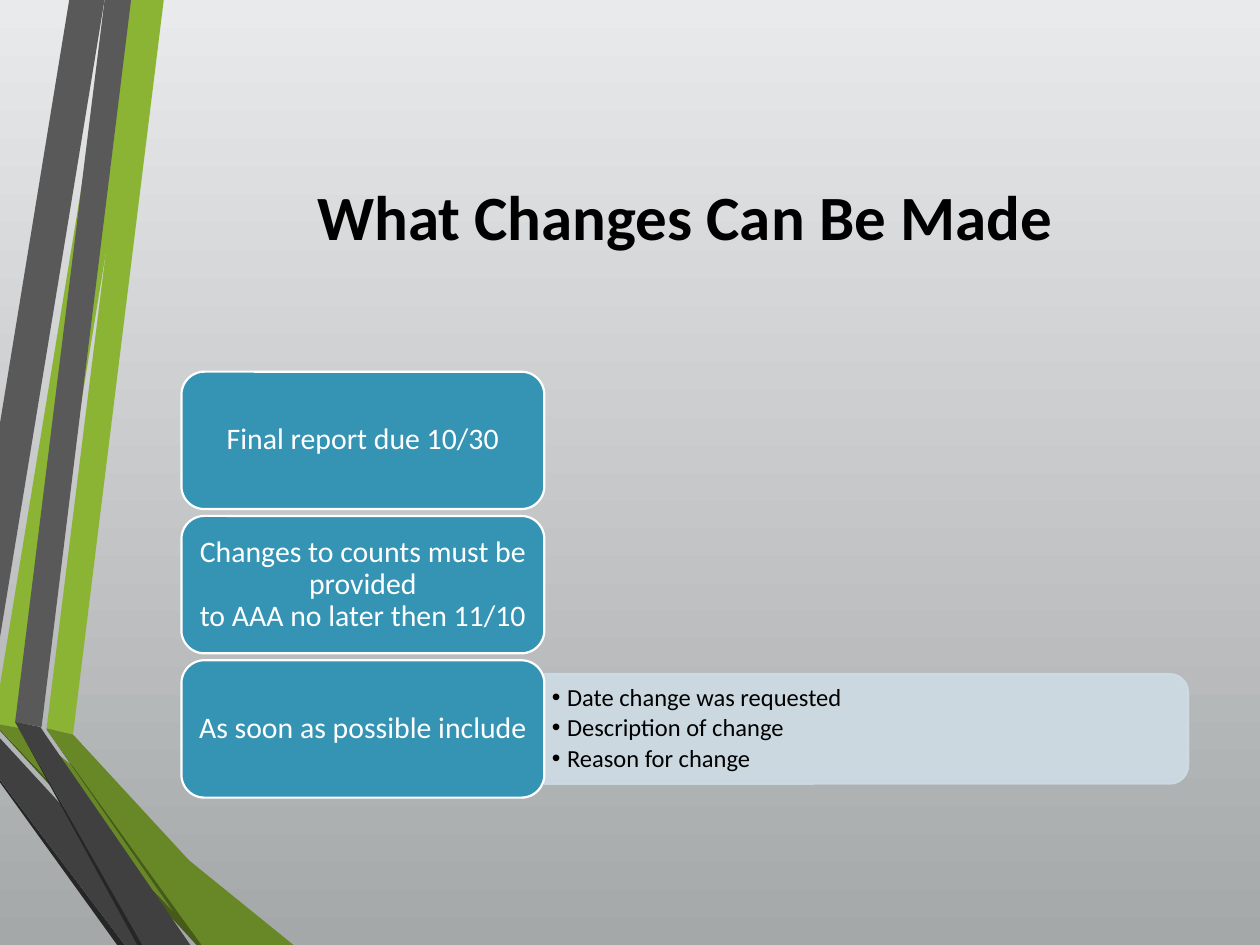
from dataclasses import dataclass

import pptx
import pptx.dml.color
import pptx.enum.shapes
import pptx.enum.text
import pptx.oxml
import pptx.oxml.ns
import pptx.util
from pptx.dml.color import RGBColor
from pptx.util import Inches

BLACK = RGBColor(0x00, 0x00, 0x00)
WHITE = RGBColor(0xFF, 0xFF, 0xFF)
BLUE = RGBColor(0x35, 0x94, 0xB4)
PALE_BLUE = RGBColor(0xCE, 0xDC, 0xE5)
GREEN = RGBColor(0x8B, 0xB4, 0x34)
MID_GREEN = RGBColor(0x68, 0x87, 0x27)
DARK_GREEN = RGBColor(0x46, 0x5A, 0x1A)
GRAY = RGBColor(0x59, 0x59, 0x59)
MID_GRAY = RGBColor(0x40, 0x40, 0x40)
DARK_GRAY = RGBColor(0x26, 0x26, 0x26)
BACKGROUND_TOP = RGBColor(0xE9, 0xEA, 0xEB)
BACKGROUND_BOTTOM = RGBColor(0xA5, 0xA8, 0xA9)

FONT = "Calibri"
LEFT = 1.44
BOX_WIDTH, BOX_HEIGHT = 2.88, 1.09
FIRST_BOX_TOP, BOX_PITCH = 2.95, 1.145


@dataclass(frozen=True)
class Ribbon:
    color: RGBColor
    points: tuple[tuple[float, float], ...]


RIBBONS = (
    Ribbon(GREEN, ((0, 5.44), (0, 5.75), (0.22, 5.79), (1.17, 0), (0.89, 0))),
    Ribbon(GRAY, ((0.83, 0), (0.55, 0), (0, 3.36), (0, 5.06))),
    Ribbon(DARK_GRAY, ((0, 6.19), (0, 6.21), (0.93, 7.5), (0.99, 7.5))),
    Ribbon(DARK_GREEN, ((0, 5.79), (0, 5.8), (1.56, 7.5), (1.63, 7.5))),
    Ribbon(MID_GREEN, ((0, 5.79), (1.63, 7.5), (2.33, 7.5), (0.22, 5.79), (0, 5.75))),
    Ribbon(MID_GRAY, ((0, 6.19), (0.99, 7.5), (1.51, 7.5), (0, 5.86))),
    Ribbon(GREEN, ((0.37, 5.78), (0.58, 5.83), (1.3, 0), (1.09, 0))),
    Ribbon(GRAY, ((1.04, 0), (0.83, 0), (0.12, 5.73), (0.33, 5.77))),
    Ribbon(DARK_GRAY, ((0.12, 5.73), (1.09, 7.5), (1.13, 7.5))),
    Ribbon(DARK_GREEN, ((0.37, 5.79), (1.56, 7.5), (1.6, 7.5))),
    Ribbon(MID_GREEN, ((0.37, 5.79), (1.6, 7.5), (2.12, 7.5), (0.58, 5.83), (0.37, 5.78))),
    Ribbon(MID_GRAY, ((1.51, 7.5), (0.36, 5.83), (0.32, 5.77), (0.12, 5.73), (1.13, 7.5))),
)
STEPS = (
    "Final report due 10/30",
    "Changes to counts must be provided\vto AAA no later then 11/10",
    "As soon as possible include",
)
DETAILS = ("Date change was requested", "Description of change", "Reason for change")


def place(shape, left: float, top: float, width: float, height: float) -> None:
    shape.left, shape.top = Inches(left), Inches(top)
    shape.width, shape.height = Inches(width), Inches(height)


def set_frame(shape, horizontal: float, vertical: float) -> None:
    frame = shape.text_frame
    frame.word_wrap = True
    frame.auto_size = pptx.enum.text.MSO_AUTO_SIZE.NONE
    frame.vertical_anchor = pptx.enum.text.MSO_ANCHOR.MIDDLE
    frame.margin_left = frame.margin_right = Inches(horizontal)
    frame.margin_top = frame.margin_bottom = Inches(vertical)


def format_runs(paragraph, size: float, color: RGBColor, bold: bool = False) -> None:
    for run in paragraph.runs:
        run.font.name = FONT
        run.font.size = pptx.util.Pt(size)
        run.font.bold = bold
        run.font.color.rgb = color


def set_background(slide) -> None:
    fill = slide.background.fill
    fill.gradient()
    fill.gradient_angle = 270
    for stop, position, color in zip(
        fill.gradient_stops, (0, 1), (BACKGROUND_TOP, BACKGROUND_BOTTOM)
    ):
        stop.position = position
        stop.color.rgb = color


def draw_ribbon(slide, ribbon: Ribbon) -> None:
    start, *others = [(Inches(x), Inches(y)) for x, y in ribbon.points]
    builder = slide.shapes.build_freeform(*start)
    builder.add_line_segments(others, close=True)
    shape = builder.convert_to_shape()
    shape.shadow.inherit = False
    shape.fill.solid()
    shape.fill.fore_color.rgb = ribbon.color
    shape.line.fill.background()


def draw_step(slide, text: str, top: float) -> None:
    shape = slide.shapes.add_shape(
        pptx.enum.shapes.MSO_SHAPE.ROUNDED_RECTANGLE,
        Inches(LEFT), Inches(top), Inches(BOX_WIDTH), Inches(BOX_HEIGHT),
    )
    shape.shadow.inherit = False
    shape.fill.solid()
    shape.fill.fore_color.rgb = BLUE
    shape.line.color.rgb = WHITE
    shape.line.width = pptx.util.Pt(1.25)
    shape.text_frame.text = text
    set_frame(shape, 0.07, 0.04)
    paragraph = shape.text_frame.paragraphs[0]
    paragraph.alignment = pptx.enum.text.PP_ALIGN.CENTER
    paragraph.line_spacing = 0.9
    format_runs(paragraph, 17, WHITE)


def draw_detail_panel(slide) -> None:
    panel = slide.shapes.add_shape(
        pptx.enum.shapes.MSO_SHAPE.ROUND_2_SAME_RECTANGLE,
        Inches(6.44), Inches(3.23), Inches(0.87), Inches(5.11),
    )
    panel.rotation = 90
    panel.shadow.inherit = False
    panel.fill.solid()
    panel.fill.fore_color.rgb = PALE_BLUE
    panel.line.color.rgb = PALE_BLUE
    panel.line.width = pptx.util.Pt(1.25)
    properties = panel._element.spPr
    for color in properties.iter(pptx.oxml.ns.qn("a:srgbClr")):
        color.append(pptx.oxml.parse_xml(
            f'<a:alpha {pptx.oxml.ns.nsdecls("a")} val="90000"/>'
        ))


def write_details(slide, body) -> None:
    place(body, 4.32, 5.39, 5.07, 0.79)
    body.text_frame.text = "\n".join(DETAILS)
    set_frame(body, 0.06, 0.03)
    for paragraph in body.text_frame.paragraphs:
        paragraph.line_spacing = 0.9
        paragraph.space_before = pptx.util.Pt(0)
        paragraph.space_after = pptx.util.Pt(2.1)
        properties = paragraph._p.get_or_add_pPr()
        properties.set("marL", str(Inches(0.12)))
        properties.set("indent", str(Inches(-0.12)))
        properties.append(pptx.oxml.parse_xml(
            f'<a:buChar {pptx.oxml.ns.nsdecls("a")} char="•"/>'
        ))
        format_runs(paragraph, 14, BLACK)
    slide.shapes._spTree.append(body._element)


def write_title(slide) -> None:
    title = slide.shapes.title
    place(title, LEFT, 0.75, 7.99, 1.92)
    title.text_frame.text = "What Changes Can Be Made"
    set_frame(title, 0.1, 0.05)
    paragraph = title.text_frame.paragraphs[0]
    paragraph.alignment = pptx.enum.text.PP_ALIGN.CENTER
    format_runs(paragraph, 36, BLACK, bold=True)


def main() -> None:
    presentation = pptx.Presentation()
    presentation.slide_width, presentation.slide_height = Inches(10), Inches(7.5)
    slide = presentation.slides.add_slide(presentation.slide_layouts[1])
    set_background(slide)
    for ribbon in RIBBONS:
        draw_ribbon(slide, ribbon)
    write_title(slide)
    draw_detail_panel(slide)
    write_details(slide, slide.placeholders[1])
    for index, text in enumerate(STEPS):
        draw_step(slide, text, FIRST_BOX_TOP + index * BOX_PITCH)
    presentation.save("out.pptx")


if __name__ == "__main__":
    main()
